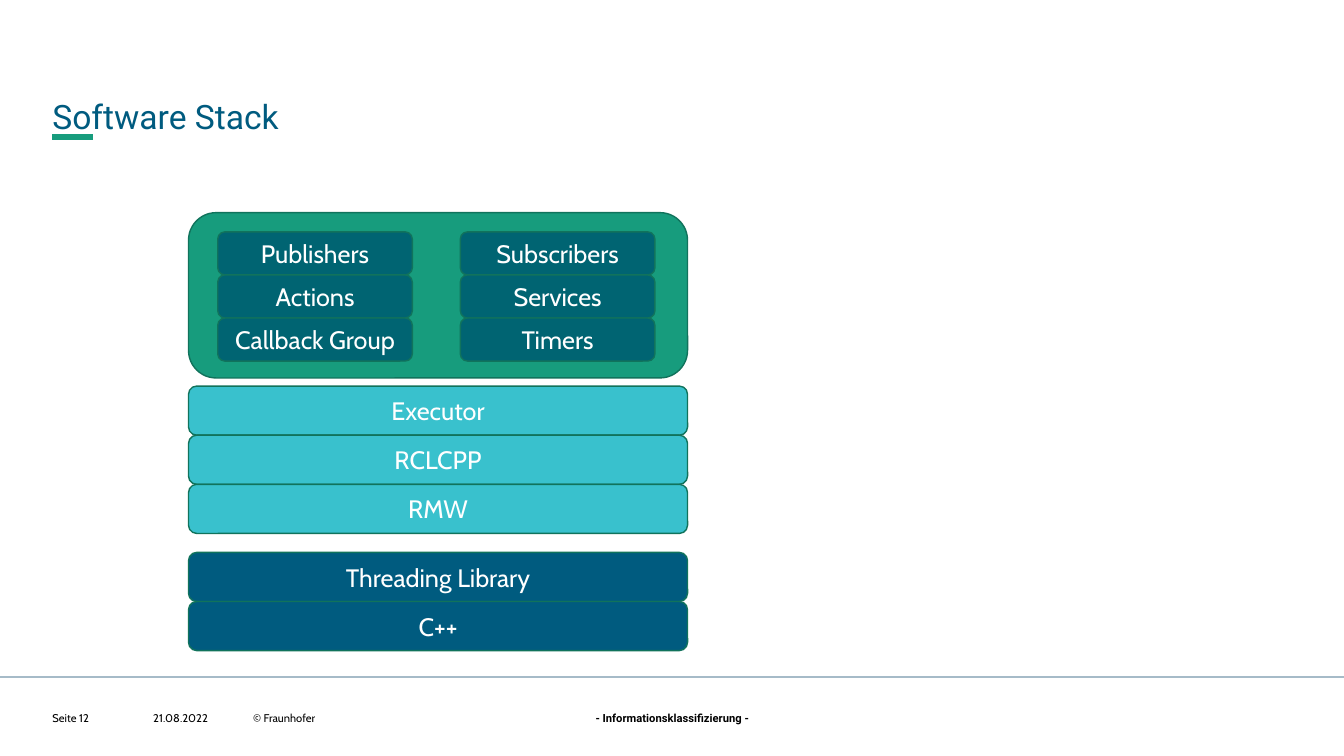
from dataclasses import dataclass

from lxml import etree
from pptx import Presentation
from pptx.dml.color import RGBColor
from pptx.enum.shapes import MSO_CONNECTOR, MSO_SHAPE
from pptx.enum.text import MSO_ANCHOR, MSO_AUTO_SIZE, PP_ALIGN
from pptx.oxml.ns import qn
from pptx.slide import Slide
from pptx.text.text import TextFrame
from pptx.util import Inches, Pt

ROUNDED = MSO_SHAPE.ROUNDED_RECTANGLE
STRAIGHT = MSO_CONNECTOR.STRAIGHT
TOP, MIDDLE = MSO_ANCHOR.TOP, MSO_ANCHOR.MIDDLE
LEFT, CENTER = PP_ALIGN.LEFT, PP_ALIGN.CENTER
FIXED = MSO_AUTO_SIZE.NONE

WIDTH, HEIGHT = Inches(13.33), Inches(7.5)
COLORS = {
    "green": "179C7D", "outline": "11735C", "petrol": "006472",
    "turquoise": "39C1CD", "blue": "005B7F", "rule": "A6BBC8",
    "white": "FFFFFF", "black": "000000",
}


@dataclass(frozen=True)
class Area:
    """Place and size in percent of the slide's width and height."""
    left: float
    top: float
    width: float
    height: float

    def lengths(self) -> tuple[int, int, int, int]:
        return (across(self.left), down(self.top),
                across(self.width), down(self.height))


@dataclass(frozen=True)
class Stack:
    """Equal layers of one colour, listed from top to bottom."""
    first: Area
    color: str
    layers: tuple[str, ...]


@dataclass(frozen=True)
class Rule:
    start: float
    end: float
    top: float
    color: str
    weight: float


@dataclass(frozen=True)
class FooterItem:
    text: str
    left: float
    width: float
    font: str = "Cabin"
    bold: bool = False
    align: PP_ALIGN = LEFT


TITLE_AREA = Area(3.9, 12.13, 92.12, 5.6)
NODE_AREA = Area(14.03, 28.13, 37.13, 21.87)
STACKS = (
    Stack(Area(16.2, 30.67, 14.48, 5.7), "petrol",
          ("Publishers", "Actions", "Callback Group")),
    Stack(Area(34.25, 30.67, 14.48, 5.7), "petrol",
          ("Subscribers", "Services", "Timers")),
    Stack(Area(14.03, 51.07, 37.13, 6.5), "turquoise",
          ("Executor", "RCLCPP", "RMW")),
    Stack(Area(14.03, 73.07, 37.13, 6.5), "blue",
          ("Threading Library", "C++")),
)
RULES = (
    Rule(3.9, 6.9, 18.13, "green", 4),
    Rule(0, 100, 89.6, "rule", 1.5),
)
FOOTER_TOP, FOOTER_HEIGHT = 94.13, 1.73
FOOTER = (
    FooterItem("Seite 12", 3.9, 5.93),
    FooterItem("21.08.2022", 11.4, 5.93),
    FooterItem("© Fraunhofer", 18.83, 24.23),
    FooterItem("- Informationsklassifizierung -", 44.11, 11.85,
               "Roboto", True, CENTER),
)


def across(percent: float) -> int:
    return round(WIDTH * percent / 100)


def down(percent: float) -> int:
    return round(HEIGHT * percent / 100)


def color(name: str) -> RGBColor:
    return RGBColor.from_string(COLORS[name])


def write(frame: TextFrame, text: str, *, font: str = "Cabin", size: float = 18,
          ink: str = "white", bold: bool = False, align: PP_ALIGN = CENTER,
          anchor: MSO_ANCHOR = MIDDLE, wrap: bool = True,
          inset: bool = True, spacing: float = 1.0) -> None:
    frame.auto_size = FIXED
    frame.word_wrap = wrap
    frame.vertical_anchor = anchor
    if not inset:
        frame.margin_left = frame.margin_right = 0
        frame.margin_top = frame.margin_bottom = 0
    para = frame.paragraphs[0]
    para.alignment = align
    para.line_spacing = spacing
    span = para.add_run()
    span.text = text
    span.font.name = font
    span.font.size = Pt(size)
    span.font.bold = bold
    span.font.color.rgb = color(ink)


def add_block(page: Slide, area: Area, fill: str, text: str = "") -> None:
    block = page.shapes.add_shape(ROUNDED, *area.lengths())
    block.shadow.inherit = False
    block.fill.solid()
    block.fill.fore_color.rgb = color(fill)
    block.line.color.rgb = color("outline")
    block.line.width = Pt(1)
    if text:
        write(block.text_frame, text)


def add_stack(page: Slide, stack: Stack) -> None:
    first = stack.first
    for row, layer in enumerate(stack.layers):
        area = Area(first.left, first.top + row * first.height,
                    first.width, first.height)
        add_block(page, area, stack.color, layer)


def add_rule(page: Slide, rule: Rule) -> None:
    line = page.shapes.add_connector(
        STRAIGHT, across(rule.start), down(rule.top),
        across(rule.end), down(rule.top))
    line.line.color.rgb = color(rule.color)
    line.line.width = Pt(rule.weight)
    etree.SubElement(line._element.spPr, qn("a:effectLst"))


def add_title(page: Slide, text: str) -> None:
    title = page.shapes.title
    title.left, title.top, title.width, title.height = TITLE_AREA.lengths()
    write(title.text_frame, text, font="Roboto", size=24, ink="blue",
          align=LEFT, anchor=TOP, inset=False, spacing=1.1)


def add_footer_item(page: Slide, item: FooterItem) -> None:
    area = Area(item.left, FOOTER_TOP, item.width, FOOTER_HEIGHT)
    box = page.shapes.add_textbox(*area.lengths())
    write(box.text_frame, item.text, font=item.font, size=8, ink="black",
          bold=item.bold, align=item.align, wrap=not item.bold, inset=False)


def main() -> None:
    deck = Presentation()
    deck.slide_width, deck.slide_height = WIDTH, HEIGHT
    page = deck.slides.add_slide(deck.slide_layouts.get_by_name("Title Only"))
    for rule in RULES:
        add_rule(page, rule)
    add_title(page, "Software Stack")
    add_block(page, NODE_AREA, "green")
    for stack in STACKS:
        add_stack(page, stack)
    for item in FOOTER:
        add_footer_item(page, item)
    deck.save("out.pptx")


if __name__ == "__main__":
    main()
